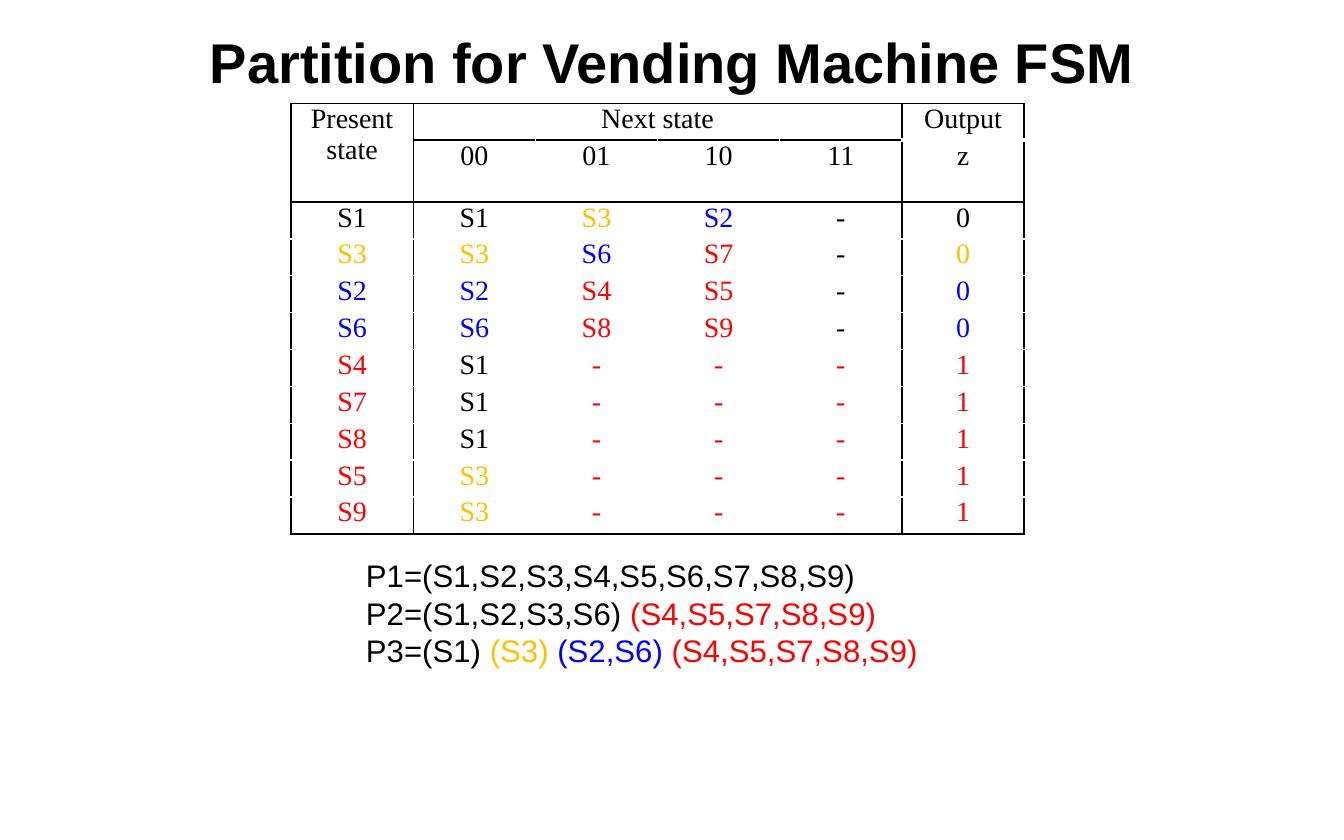
from lxml import etree
from pptx import Presentation
from pptx.dml.color import RGBColor
from pptx.enum.text import MSO_ANCHOR, MSO_AUTO_SIZE, PP_ALIGN
from pptx.oxml.ns import qn
from pptx.util import Cm, Pt

CENTER, LEFT = PP_ALIGN.CENTER, PP_ALIGN.LEFT
MIDDLE, TOP = MSO_ANCHOR.MIDDLE, MSO_ANCHOR.TOP
GROW = MSO_AUTO_SIZE.SHAPE_TO_FIT_TEXT

HEX = {"black": "000000", "white": "FFFFFF", "gold": "FFC000",
       "blue": "0000FF", "red": "FF0000"}
GROUPS = {"S1": "black", "S3": "gold", "S2": "blue", "S6": "blue",
          "S4": "red", "S5": "red", "S7": "red", "S8": "red", "S9": "red"}

HEADS = [["Present state", "Next state", "", "", "", "Output"],
         ["", "00", "01", "10", "11", "z"]]
STATES = [line.split() for line in (
    "S1 S1 S3 S2 - 0", "S3 S3 S6 S7 - 0", "S2 S2 S4 S5 - 0",
    "S6 S6 S8 S9 - 0", "S4 S1 - - - 1", "S7 S1 - - - 1",
    "S8 S1 - - - 1", "S5 S3 - - - 1", "S9 S3 - - - 1")]
SPANS = [((0, 0), (1, 0)), ((0, 1), (0, 4))]

PARTS = [
    [("P1=(S1,S2,S3,S4,S5,S6,S7,S8,S9)", "black")],
    [("P2=(S1,S2,S3,S6) ", "black"), ("(S4,S5,S7,S8,S9)", "red")],
    [("P3=(S1)", "black"), (" (S3) ", "gold"), ("(S2,S6) ", "blue"),
     ("(S4,S5,S7,S8,S9)", "red")],
]


def tint(text, row):
    """Colour of an entry: its state's group, or that of the row's state."""
    if text in GROUPS:
        return GROUPS[text]
    own = GROUPS.get(row[0], "black")
    return "black" if text == "-" and own != "red" else own


def ruled(row, col):
    """Tell whether the horizontal line above this row is black here."""
    return row in (0, 2, len(HEADS + STATES)) or row == 1 and 1 <= col <= 4


class Deck:
    sans, serif = "Arial", "Times New Roman"

    def __init__(self, wide, high):
        self.file = Presentation()
        self.file.slide_width, self.file.slide_height = Cm(wide), Cm(high)
        self.slide = self.file.slides.add_slide(self.file.slide_layouts[6])

    def fill_para(self, para, runs, face, size, align=LEFT, bold=False):
        para.alignment = align
        font = para.font
        font.name, font.size, font.bold = face, Pt(size), bold
        for text, color in runs:
            run = para.add_run()
            run.text = text
            run.font.color.rgb = RGBColor.from_string(HEX[color])

    def text(self, box, lines, size, align=LEFT, bold=False, anchor=TOP,
             wrap=True):
        shape = self.slide.shapes.add_textbox(*map(Cm, box))
        frame = shape.text_frame
        frame.word_wrap, frame.vertical_anchor = wrap, anchor
        if not wrap:
            frame.auto_size = GROW
        for i, runs in enumerate(lines):
            para = frame.add_paragraph() if i else frame.paragraphs[0]
            self.fill_para(para, runs, self.sans, size, align, bold)

    def edge(self, cell, side, color, width=1):
        line = etree.SubElement(cell._tc.get_or_add_tcPr(),
                                qn(f"a:ln{side}"), w=str(Pt(width)))
        fill = etree.SubElement(line, qn("a:solidFill"))
        etree.SubElement(fill, qn("a:srgbClr"), val=HEX[color])

    def frame(self, cell, row, col):
        """Draw the four borders, leaving the inside of a span clear."""
        right = col + (cell.span_width if cell.is_merge_origin else 1)
        below = row + (cell.span_height if cell.is_merge_origin else 1)
        lines = {"L": col in (0, 1, 5, 6), "R": right in (0, 1, 5, 6),
                 "T": ruled(row, col), "B": ruled(below, col)}
        for side, dark in lines.items():
            if dark or not cell.is_spanned:
                gap = side == "B" and row == 0 and not dark
                self.edge(cell, side, "black" if dark else "white",
                          3 if gap else 1)

    def table(self, box, rows, spans, size):
        count = len(rows), len(rows[0])
        grid = self.slide.shapes.add_table(*count, *map(Cm, box)).table
        grid.first_row = grid.horz_banding = False
        for start, end in spans:
            grid.cell(*start).merge(grid.cell(*end))
        for r, row in enumerate(rows):
            for c, text in enumerate(row):
                cell = grid.cell(r, c)
                cell.margin_left = cell.margin_right = 0
                cell.margin_top = cell.margin_bottom = 0
                self.frame(cell, r, c)
                cell.fill.background()
                runs = [(text, tint(text, row))] if text else []
                self.fill_para(cell.text_frame.paragraphs[0], runs,
                               self.serif, size, CENTER)


def main():
    deck = Deck(30.48, 19.05)
    deck.table((6.6, 2.34, 16.63, 9.2), HEADS + STATES, SPANS, 18)
    deck.text((8.05, 12.5, 13.1, 2.82), PARTS, 20, wrap=False)
    deck.text((2.54, 0.43, 25.4, 1.9),
              [[("Partition for Vending Machine FSM", "black")]],
              36, CENTER, True, MIDDLE)
    deck.file.save("out.pptx")


if __name__ == "__main__":
    main()
